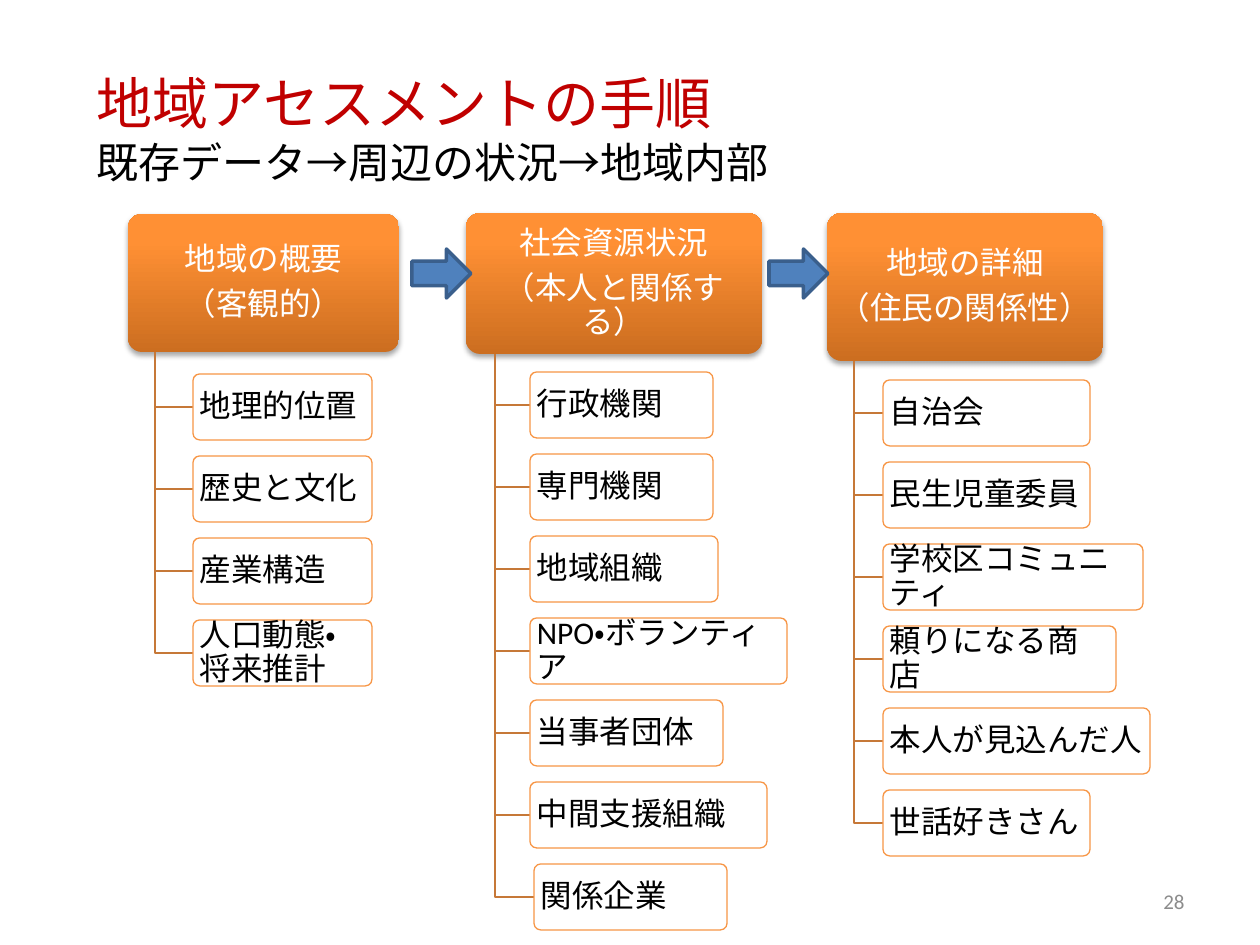
from dataclasses import dataclass

import pptx
import pptx.dml.color
import pptx.enum.lang
import pptx.enum.shapes
import pptx.enum.text
import pptx.oxml
import pptx.oxml.ns
import pptx.shapes.autoshape
import pptx.slide
import pptx.text.text
import pptx.util

RGBColor = pptx.dml.color.RGBColor
Shapes = pptx.enum.shapes.MSO_SHAPE
Align = pptx.enum.text.PP_ALIGN

SCALE = 914400 / 126  # EMU per px
ITEM_HEIGHT = 66
ITEM_PITCH = 82
TITLE_ONLY_LAYOUT = 5

LATIN = "Calibri"
JAPANESE = "Noto Sans CJK JP"

BLACK = RGBColor(0x00, 0x00, 0x00)
WHITE = RGBColor(0xFF, 0xFF, 0xFF)
GRAY = RGBColor(0x8C, 0x8C, 0x8C)
RED = RGBColor(0xC0, 0x00, 0x00)
ORANGE = RGBColor(0xF7, 0x96, 0x46)
BRANCH_BROWN = RGBColor(0xC6, 0x78, 0x38)
ARROW_BLUE = RGBColor(0x4F, 0x81, 0xBD)
ARROW_EDGE = RGBColor(0x3A, 0x5F, 0x8C)
HEADER_STOPS = (
    (0, RGBColor(0xCC, 0x6E, 0x20)),
    (80, RGBColor(0xFF, 0x90, 0x34)),
    (100, RGBColor(0xFF, 0x91, 0x36)),
)


@dataclass(frozen=True)
class Box:
    left: int
    top: int
    width: int
    height: int

    def emu(self) -> tuple[int, ...]:
        return tuple(round(length * SCALE) for length in (self.left, self.top, self.width, self.height))


@dataclass(frozen=True)
class Item:
    text: str
    width: int
    indent: int = 0


@dataclass(frozen=True)
class Column:
    heading: str
    header: Box
    items_left: int
    items_top: int
    items: tuple[Item, ...]


COLUMNS = (
    Column("地域の概要\n（客観的）", Box(128, 214, 271, 138), 193, 374, (
        Item("地理的位置", 179),
        Item("歴史と文化", 179),
        Item("産業構造", 179),
        Item("人口動態・将来推計", 179),
    )),
    Column("社会資源状況\n（本人と関係する）", Box(466, 213, 296, 141), 530, 372, (
        Item("行政機関", 183),
        Item("専門機関", 183),
        Item("地域組織", 188),
        Item("NPO・ボランティア", 257),
        Item("当事者団体", 193),
        Item("中間支援組織", 237),
        Item("関係企業", 193, indent=4),
    )),
    Column("地域の詳細\n（住民の関係性）", Box(827, 213, 276, 148), 883, 380, (
        Item("自治会", 207),
        Item("民生児童委員", 207),
        Item("学校区コミュニティ", 260),
        Item("頼りになる商店", 233),
        Item("本人が見込んだ人", 267),
        Item("世話好きさん", 207),
    )),
)
ARROWS = (Box(412, 249, 59, 49), Box(769, 249, 59, 49))


def write_text(frame: pptx.text.text.TextFrame, text: str, size: int, color: RGBColor,
               font_name: str = LATIN, alignment: Align = Align.LEFT) -> None:
    frame.text = text
    frame.word_wrap = True
    frame.auto_size = pptx.enum.text.MSO_AUTO_SIZE.NONE
    frame.vertical_anchor = pptx.enum.text.MSO_ANCHOR.MIDDLE
    for paragraph in frame.paragraphs:
        paragraph.alignment = alignment
        for run in paragraph.runs:
            run.font.size = pptx.util.Pt(size)
            run.font.name = font_name
            run.font.color.rgb = color
            run.font.language_id = pptx.enum.lang.MSO_LANGUAGE_ID.JAPANESE
            if font_name == JAPANESE:
                run.font._element.get_or_add_latin().addnext(
                    pptx.oxml.parse_xml(f'<a:ea {pptx.oxml.ns.nsdecls("a")} typeface="{JAPANESE}"/>'))


def add_card(slide: pptx.slide.Slide, box: Box, text: str, color: RGBColor,
             font_name: str, alignment: Align) -> pptx.shapes.autoshape.Shape:
    """Add a rounded rectangle with tight margins and line spacing."""
    card = slide.shapes.add_shape(Shapes.ROUNDED_RECTANGLE, *box.emu())
    card.adjustments[0] = 0.1
    card.shadow.inherit = False
    frame = card.text_frame
    write_text(frame, text, 18, color, font_name, alignment)
    frame.margin_left = frame.margin_right = pptx.util.Inches(0.04)
    frame.margin_top = frame.margin_bottom = pptx.util.Inches(0.03)
    for paragraph in frame.paragraphs:
        paragraph.line_spacing = 0.9
        paragraph.space_after = pptx.util.Pt(6.3)
    return card


def add_header(slide: pptx.slide.Slide, column: Column) -> None:
    card = add_card(slide, column.header, column.heading, WHITE, JAPANESE, Align.CENTER)
    card.line.fill.background()
    namespace = pptx.oxml.ns.nsdecls("a")
    stops = "".join(f'<a:gs pos="{position * 1000}"><a:srgbClr val="{color}"/></a:gs>'
                    for position, color in HEADER_STOPS)
    properties = card._element.spPr
    properties.find(pptx.oxml.ns.qn("a:prstGeom")).addnext(pptx.oxml.parse_xml(
        f'<a:gradFill {namespace} rotWithShape="1"><a:gsLst>{stops}</a:gsLst>'
        '<a:lin ang="16200000" scaled="0"/></a:gradFill>'))
    properties.find(pptx.oxml.ns.qn("a:effectLst")).append(pptx.oxml.parse_xml(
        f'<a:outerShdw {namespace} blurRad="{pptx.util.Pt(3.1)}" dist="{pptx.util.Pt(1.8)}" '
        'dir="5400000" rotWithShape="0"><a:srgbClr val="000000"><a:alpha val="35000"/>'
        '</a:srgbClr></a:outerShdw>'))


def add_branch(slide: pptx.slide.Slide, header: Box, item_box: Box) -> None:
    """Draw the elbow from a header's lower edge to an item's left edge."""
    trunk = header.left + header.width // 10
    middle = item_box.top + item_box.height // 2
    builder = slide.shapes.build_freeform(trunk, header.top + header.height, scale=SCALE)
    builder.add_line_segments([(trunk, middle), (item_box.left, middle)], close=False)
    branch = builder.convert_to_shape()
    branch.shadow.inherit = False
    branch.fill.background()
    branch.line.color.rgb = BRANCH_BROWN
    branch.line.width = pptx.util.Pt(0.75)


def add_column(slide: pptx.slide.Slide, column: Column) -> None:
    add_header(slide, column)
    for index, item in enumerate(column.items):
        box = Box(column.items_left + item.indent, column.items_top + index * ITEM_PITCH,
                  item.width, ITEM_HEIGHT)
        add_branch(slide, column.header, box)
        card = add_card(slide, box, item.text, BLACK, LATIN, Align.LEFT)
        card.fill.solid()
        card.fill.fore_color.rgb = WHITE
        card.line.color.rgb = ORANGE
        card.line.width = pptx.util.Pt(0.75)


def add_arrow(slide: pptx.slide.Slide, box: Box) -> None:
    arrow = slide.shapes.add_shape(Shapes.RIGHT_ARROW, *box.emu())
    arrow.shadow.inherit = False
    arrow.fill.solid()
    arrow.fill.fore_color.rgb = ARROW_BLUE
    arrow.line.color.rgb = ARROW_EDGE
    arrow.line.width = pptx.util.Pt(2)


def main() -> None:
    presentation = pptx.Presentation()
    presentation.slide_width = pptx.util.Inches(10)
    presentation.slide_height = pptx.util.Inches(7.5)
    slide = presentation.slides.add_slide(presentation.slide_layouts[TITLE_ONLY_LAYOUT])

    title = slide.shapes.title
    title.left, title.top, title.width, title.height = Box(84, 20, 674, 165).emu()
    write_text(title.text_frame, "地域アセスメントの手順", 32, RED, JAPANESE)

    for column in COLUMNS:
        add_column(slide, column)
    for box in ARROWS:
        add_arrow(slide, box)

    subtitle = slide.shapes.add_textbox(*Box(84, 79, 713, 165).emu())
    write_text(subtitle.text_frame, "既存データ→周辺の状況→地域内部", 24, BLACK)
    page_number = slide.shapes.add_textbox(*Box(903, 876, 294, 50).emu())
    write_text(page_number.text_frame, "28", 12, GRAY, alignment=Align.RIGHT)

    presentation.save("out.pptx")


if __name__ == "__main__":
    main()
